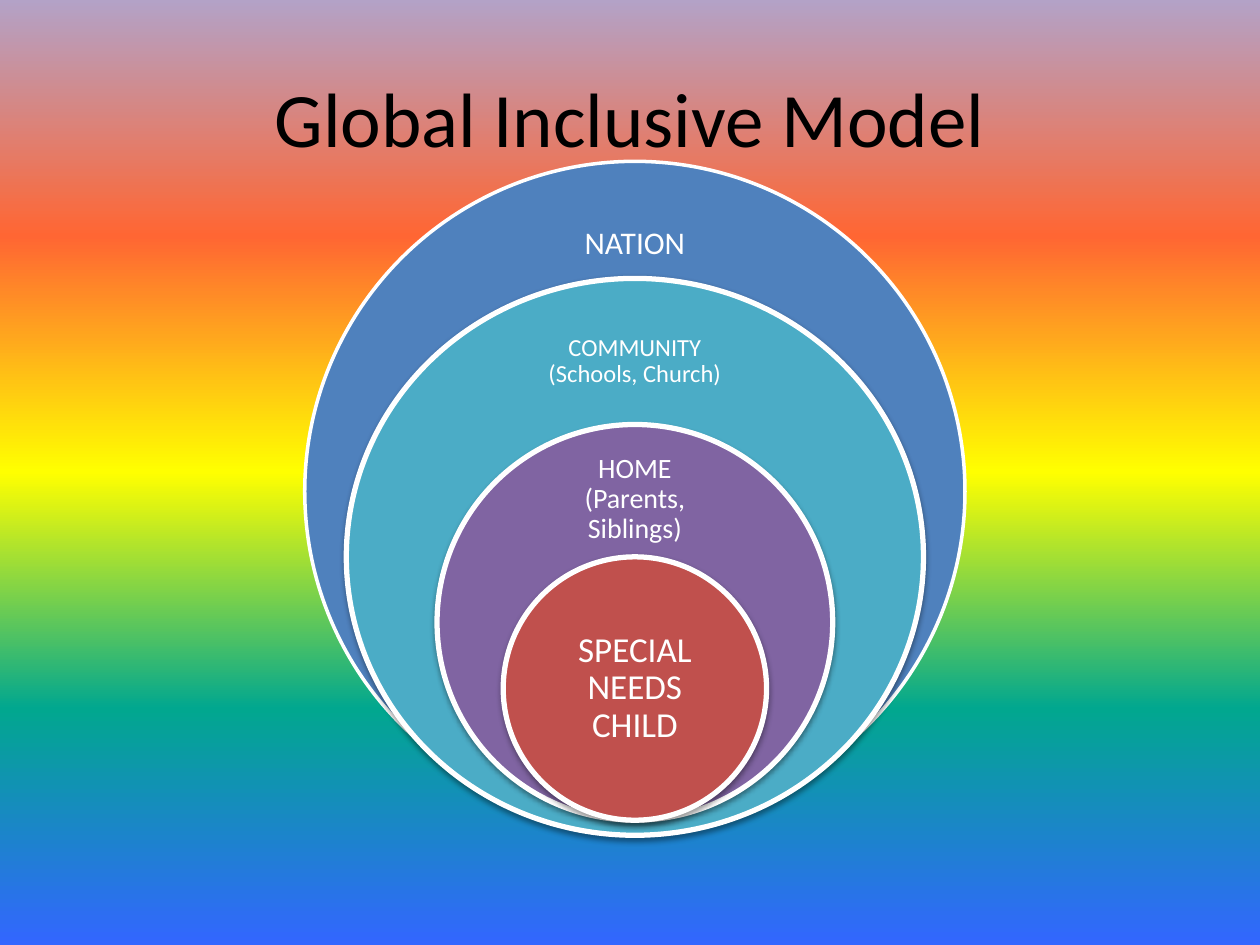
from lxml.etree import SubElement
from pptx import Presentation
from pptx.dml.color import RGBColor
from pptx.enum.shapes import MSO_SHAPE
from pptx.enum.text import MSO_ANCHOR, PP_ALIGN
from pptx.oxml.ns import qn
from pptx.util import Pt

COLORS = {
    "nation": "4F81BD",
    "community": "4BACC6",
    "home": "8064A2",
    "child": "C0504D",
    "white": "FFFFFF",
    "black": "000000",
}
RAINBOW = ["B3A2C7", "FF6633", "FFFF00", "01A78F", "3366FF"]
TITLE = "Global Inclusive Model"
CENTER_X = 362.8

# color, circle (top, width, height), outline, shadow,
# label, label box (top, width, height), inset, text size
RINGS = [
    ("nation", (92.2, 377.3, 377.3), 2, False,
     "NATION", (110.9, 105.2, 56.9), 10, 18),
    ("community", (159.1, 329.8, 318.2), 3, True,
     "COMMUNITY (Schools, Church)", (177.8, 116, 57.6), 7.8, 14),
    ("home", (242.6, 226.1, 226.1), 3, True,
     "HOME (Parents, Siblings)", (259.9, 105.2, 51.1), 9, 16),
    ("child", (318.2, 150.5, 150.5), 3, True,
     "SPECIAL NEEDS CHILD", (355.7, 106.6, 75.6), 11.2, 20),
]


def rgb(name):
    return RGBColor.from_string(COLORS[name])


def centered(top, width, height):
    """Left, top, width and height of a box on the rings' shared axis."""
    return [Pt(value) for value in (CENTER_X - width / 2, top, width, height)]


def paint_background(slide):
    fill = slide.background.fill
    fill.gradient()
    fill.gradient_angle = 270
    stops = slide.element.find(".//" + qn("a:gsLst"))
    for stop in list(stops):
        stops.remove(stop)
    for index, color in enumerate(RAINBOW):
        position = index * 100000 // (len(RAINBOW) - 1)
        stop = SubElement(stops, qn("a:gs"), pos=str(position))
        SubElement(stop, qn("a:srgbClr"), val=color)


def add_shadow(shape):
    effects = shape.element.spPr.find(qn("a:effectLst"))
    shadow = SubElement(effects, qn("a:outerShdw"), blurRad=str(Pt(3.15)),
                        dist=str(Pt(1.57)), dir="5400000", rotWithShape="0")
    color = SubElement(shadow, qn("a:srgbClr"), val=COLORS["black"])
    SubElement(color, qn("a:alpha"), val="38000")


def add_circle(slide, box, color, outline, has_shadow):
    circle = slide.shapes.add_shape(MSO_SHAPE.OVAL, *box)
    circle.fill.solid()
    circle.fill.fore_color.rgb = rgb(color)
    circle.line.color.rgb = rgb("white")
    circle.line.width = Pt(outline)
    circle.shadow.inherit = False
    if has_shadow:
        add_shadow(circle)


def add_text(slide, box, text, size, color, inset, spacing):
    frame = slide.shapes.add_textbox(*box).text_frame
    frame.word_wrap = True
    frame.vertical_anchor = MSO_ANCHOR.MIDDLE
    frame.margin_left = frame.margin_right = Pt(inset)
    frame.margin_top = frame.margin_bottom = Pt(inset)
    frame.text = text
    paragraph = frame.paragraphs[0]
    paragraph.alignment = PP_ALIGN.CENTER
    paragraph.line_spacing = spacing
    font = paragraph.runs[0].font
    font.name = "Calibri"
    font.size = Pt(size)
    font.color.rgb = rgb(color)


def main():
    presentation = Presentation()
    presentation.slide_width = Pt(720)
    presentation.slide_height = Pt(540)
    slide = presentation.slides.add_slide(presentation.slide_layouts[6])
    paint_background(slide)
    for color, circle, outline, has_shadow, label, box, inset, size in RINGS:
        add_circle(slide, centered(*circle), color, outline, has_shadow)
        add_text(slide, centered(*box), label, size, "white", inset, 0.9)
    title_box = [Pt(value) for value in (36, 21.6, 648, 90)]
    add_text(slide, title_box, TITLE, 44, "black", 3.6, 1.0)
    presentation.save("out.pptx")


if __name__ == "__main__":
    main()
